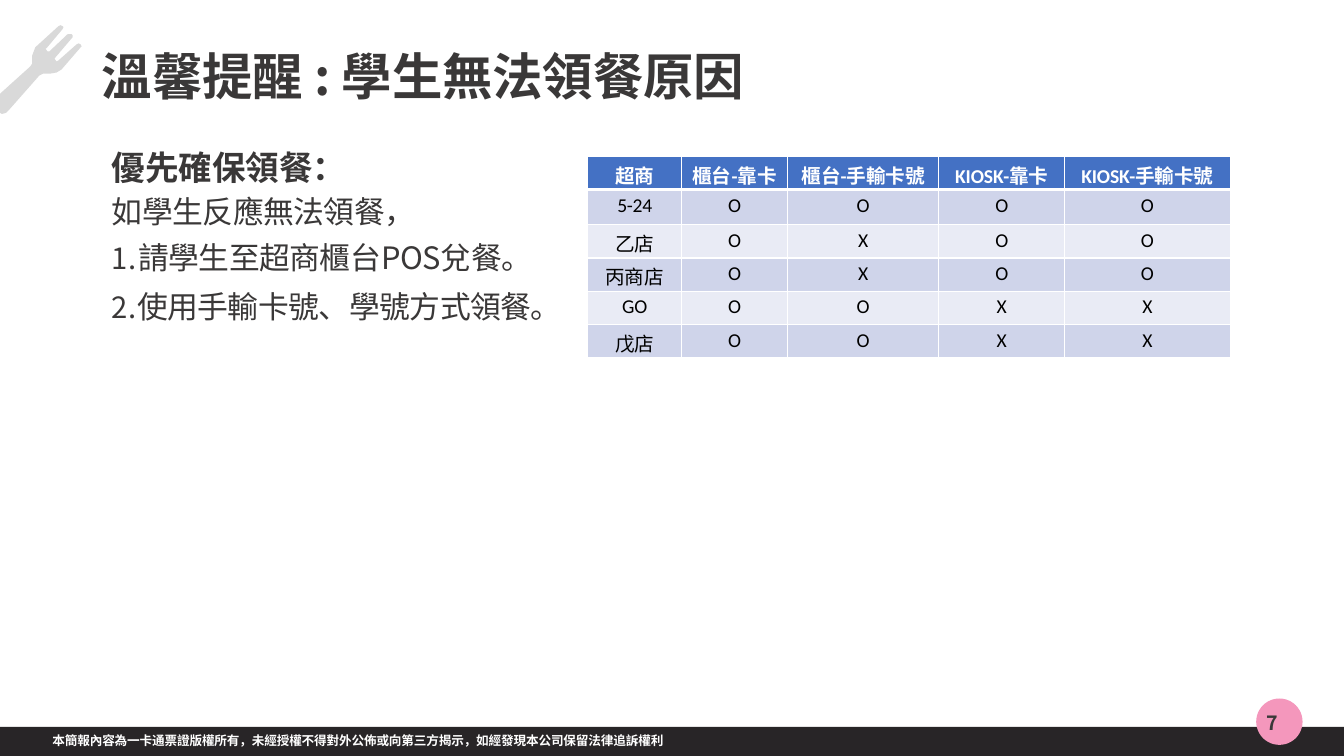
from dataclasses import dataclass

from lxml.etree import SubElement as Sub
from pptx import Presentation
from pptx.dml.color import RGBColor as Rgb
from pptx.enum.shapes import MSO_SHAPE as Kind
from pptx.enum.text import MSO_ANCHOR as Anchor, MSO_AUTO_SIZE as Auto, PP_ALIGN as Align
from pptx.oxml.ns import qn
from pptx.util import Emu, Inches, Pt

WIDE, HIGH = Inches(13.33), Inches(7.5)
HUES = {"ink": "3A3838", "white": "FFFFFF", "black": "000000", "bar": "282527", "fork": "D9D9D9",
        "disc": "F497BC", "head": "4471C4", "odd": "CFD4EA", "even": "E9EBF5"}
SC, TC, LATIN = "Noto Sans CJK SC", "Noto Sans CJK TC", "Calibri"


@dataclass
class Box:
    """Place and size in percent of the slide."""
    left: float
    top: float
    width: float
    height: float

    def emu(self) -> tuple:
        return (across(self.left), down(self.top), across(self.width), down(self.height))


@dataclass
class Look:
    size: float
    hue: str = "ink"
    bold: bool = False
    face: str = SC
    latin: str = SC
    track: int = -10  # hundredths of a point


@dataclass
class Line:
    text: str
    look: Look
    gap: float = 0
    margin: float = 0.01
    number: bool = False


def across(share: float) -> Emu:
    return Emu(round(WIDE * share / 100))


def down(share: float) -> Emu:
    return Emu(round(HIGH * share / 100))


def color(name: str) -> Rgb:
    return Rgb.from_string(HUES[name])


def style(par, look: Look) -> None:
    for run in par.runs:
        font = run.font
        font.size, font.bold, font.name = Pt(look.size), look.bold, look.latin
        font.color.rgb = color(look.hue)
        props = run._r.get_or_add_rPr()
        props.set("spc", str(look.track))
        Sub(props, qn("a:ea")).set("typeface", look.face)


def write(shape, box: Box, inset: float, lines: list[Line]) -> None:
    shape.left, shape.top, shape.width, shape.height = box.emu()
    frame = shape.text_frame
    frame.text = "\n".join(line.text for line in lines)
    frame.word_wrap, frame.auto_size = True, Auto.SHAPE_TO_FIT_TEXT
    frame.vertical_anchor = Anchor.TOP
    frame.margin_left = frame.margin_right = frame.margin_bottom = 0
    frame.margin_top = Inches(inset)
    for par, line in zip(frame.paragraphs, lines):
        par.alignment = Align.LEFT
        props = par._p.get_or_add_pPr()
        margin = str(Inches(line.margin))
        props.set("marL", margin)
        props.set("indent", str(Inches(0.01 - line.margin)))
        if line.number:
            Sub(props, qn("a:buSzPct")).set("val", "95000")
            Sub(props, qn("a:buAutoNum")).set("type", "arabicPeriod")
            tab = Sub(Sub(props, qn("a:tabLst")), qn("a:tab"))
            tab.set("pos", margin)
            tab.set("algn", "l")
        if line.gap:
            par.space_before = Pt(line.gap)
        style(par, line.look)


def paint(shape, hue: str) -> None:
    shape.shadow.inherit = False
    shape.fill.solid()
    shape.fill.fore_color.rgb = color(hue)
    shape.line.fill.background()


def edge(cell, row: int) -> None:
    props = cell._tc.get_or_add_tcPr()
    for side in "LRTB":
        thick = (side, row) in (("B", 0), ("T", 1))
        rule = Sub(props, qn(f"a:ln{side}"))
        rule.set("w", str(Pt(3 if thick else 1)))
        Sub(Sub(rule, qn("a:solidFill")), qn("a:srgbClr")).set("val", HUES["white"])


deck = Presentation()
deck.slide_width, deck.slide_height = WIDE, HIGH
slide = deck.slides.add_slide(deck.slide_layouts[5])
shapes = slide.shapes

# Footer bar and page disc
for kind, box, hue in ((Kind.RECTANGLE, Box(0, 96.13, 100, 3.87), "bar"),
                       (Kind.OVAL, Box(93.47, 92.4, 3.45, 6.13), "disc")):
    paint(shapes.add_shape(kind, *box.emu()), hue)

# Fork, in hundredths of an inch
FORK = [(60, 25), (62, 26), (63, 27), (62, 29), (46, 48), (45, 48), (47, 51), (49, 51),
        (67, 34), (71, 34), (72, 35), (72, 37), (55, 57), (54, 58), (56, 61), (58, 60),
        (76, 44), (78, 43), (80, 44), (81, 46), (80, 47), (61, 69), (56, 72), (50, 73),
        (43, 73), (39, 75), (9, 109), (6, 112), (2, 113), (0, 112), (0, 93), (30, 66),
        (32, 63), (32, 55), (35, 47), (58, 26)]
pen = shapes.build_freeform(*FORK[0], scale=Inches(0.01))
pen.add_line_segments(FORK[1:], close=True)
paint(pen.convert_to_shape(), "fork")

# Title, page number, notice and advice
plain = Look(22, track=-30)
write(shapes.title, Box(7.5, 5.87, 56.04, 8.4), 0.01,
      [Line("溫馨提醒 : 學生無法領餐原因", Look(36, bold=True))])
for box, inset, lines in (
    (Box(94.15, 93.6, 2.48, 3.87), 0.03, [Line("7", Look(14, bold=True, track=-20), margin=0.02)]),
    (Box(3.83, 96.67, 46.14, 2.67), 0.02,
     [Line("本簡報內容為一卡通票證版權所有，未經授權不得對外公佈或向第三方揭示，如經發現本公司保留法律追訴權利",
           Look(9, "white", True, TC, TC))]),
    (Box(8.25, 18.53, 83.12, 24.67), 0.07,
     [Line("優先確保領餐：", Look(24, bold=True)),
      Line("如學生反應無法領餐，", plain, 3.5),
      Line("請學生至超商櫃台POS兌餐。", plain, 6.7, 0.27, True),
      Line("使用手輸卡號、學號方式領餐。", plain, 8.7, 0.26, True)]),
):
    write(shapes.add_textbox(*box.emu()), box, inset, lines)

# Store table
ROWS = [("超商", "櫃台-靠卡", "櫃台-手輸卡號", "KIOSK-靠卡", "KIOSK-手輸卡號"),
        ("5-24", *"OOOO"), ("乙店", *"OXOO"), ("丙商店", *"OXOO"),
        ("GO", *"OOXX"), ("戊店", *"OOXX")]
COLS = (6.98, 7.88, 11.25, 9.38, 12.3)
TALL = (4.4, 4.67, 4.4, 4.4, 4.4, 4.4)
area = Box(43.74, 20.67, sum(COLS), sum(TALL))
grid = shapes.add_table(len(ROWS), len(COLS), *area.emu()).table
for col, share in zip(grid.columns, COLS):
    col.width = across(share)
for row, share in zip(grid.rows, TALL):
    row.height = down(share)

top = Look(14, "white", True, TC, LATIN)
cells = Look(14, "black", False, SC, LATIN, -20)
for r, words in enumerate(ROWS):
    for c, word in enumerate(words):
        cell = grid.cell(r, c)
        cell.margin_left = cell.margin_right = cell.margin_bottom = 0
        cell.margin_top = Inches(0.04)
        edge(cell, r)
        cell.fill.solid()
        cell.fill.fore_color.rgb = color("head" if r == 0 else "odd" if r % 2 else "even")
        cell.text_frame.text = word
        par = cell.text_frame.paragraphs[0]
        par.alignment = Align.CENTER
        style(par, cells if r else top)

deck.save("out.pptx")
